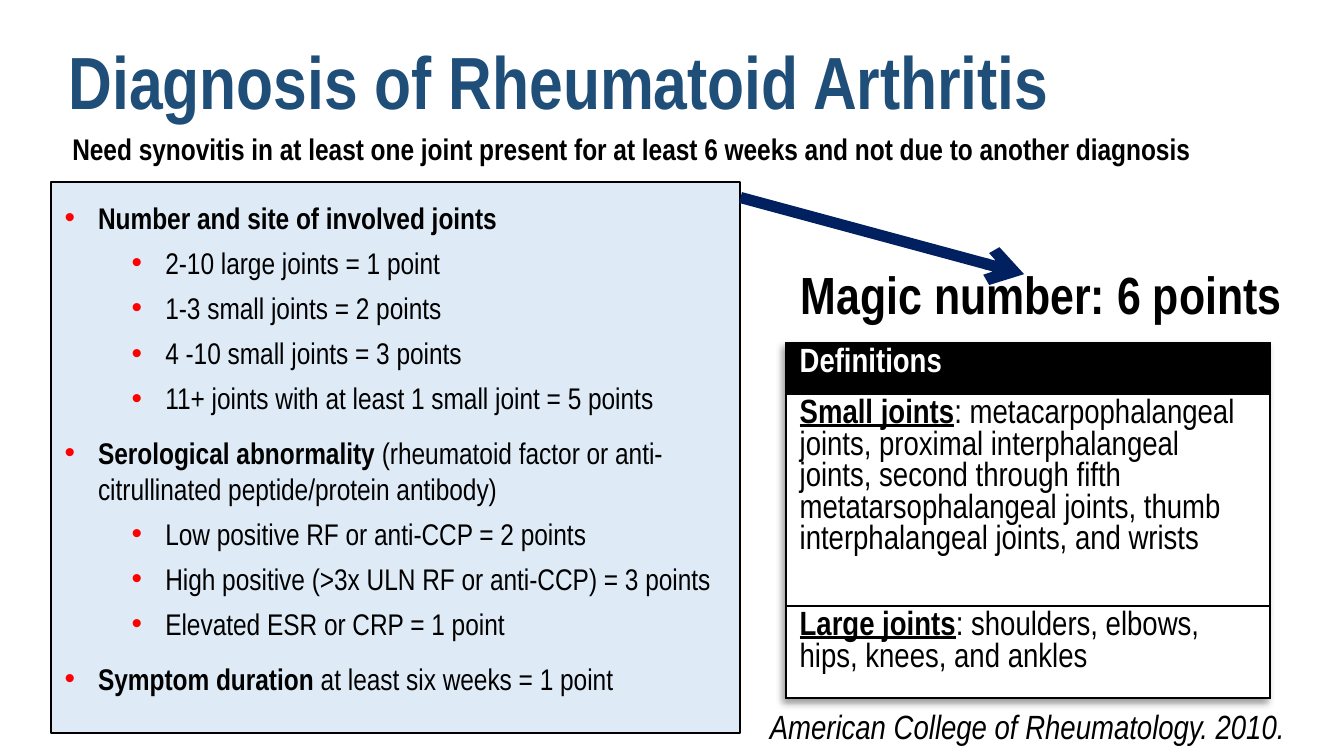
from lxml import etree
from pptx import Presentation
from pptx import util as u
from pptx.dml import color
from pptx.enum import shapes, text
from pptx.oxml import ns

FONT = "Arial Narrow"
BLACK, WHITE, RED = "000000", "FFFFFF", "FF0000"
TITLE_BLUE, PANEL_BLUE, ARROW_BLUE = "1F4E79", "DEEBF7", "002060"
COLUMNS, ROWS = 100, 56.25
UNIT = u.Inches(10) / COLUMNS

CRITERIA = [
    ("Number and site of involved joints", "", [
        "2-10 large joints = 1 point",
        "1-3 small joints = 2 points",
        "4 -10 small joints = 3 points",
        "11+ joints with at least 1 small joint = 5 points"]),
    ("Serological abnormality ",
     "(rheumatoid factor or anti-citrullinated peptide/protein antibody)", [
         "Low positive RF or anti-CCP = 2 points",
         "High positive (>3x ULN RF or anti-CCP) = 3 points",
         "Elevated ESR or CRP = 1 point"]),
    ("Symptom duration ", "at least six weeks = 1 point", []),
]
DEFINITIONS = [
    ("Small joints", ": metacarpophalangeal joints, proximal interphalangeal joints, "
     "second through fifth metatarsophalangeal joints, thumb interphalangeal joints, and wrists"),
    ("Large joints", ": shoulders, elbows, hips, knees, and ankles"),
]


def grid(*cells):
    return [u.Emu(round(cell * UNIT)) for cell in cells]


def paint(target, value):
    target.rgb = color.RGBColor.from_string(value)


def add_xml(parent, tag, **attributes):
    return etree.SubElement(parent, ns.qn(tag), attributes)


def add_span(para, words, size, ink=BLACK, bold=False, italic=False, underline=False):
    span = para.add_run()
    span.text = words
    font = span.font
    font.name, font.size = FONT, u.Pt(size)
    font.bold, font.italic, font.underline = bold, italic, underline
    paint(font.color, ink)


def place(shape, area):
    shape.left, shape.top, shape.width, shape.height = grid(*area)


def add_title(page, area):
    title = page.shapes.title
    place(title, area)
    frame = title.text_frame
    frame.word_wrap = True
    frame.auto_size = text.MSO_AUTO_SIZE.NONE
    frame.vertical_anchor = text.MSO_ANCHOR.MIDDLE
    para = frame.paragraphs[0]
    para.alignment = text.PP_ALIGN.LEFT
    para.line_spacing = 0.9
    add_span(para, "Diagnosis of Rheumatoid Arthritis", 39.6, TITLE_BLUE, bold=True)


def add_caption(page, area, words, size, wrap=False, align=text.PP_ALIGN.LEFT,
                before=0, **style):
    frame = page.shapes.add_textbox(*grid(*area)).text_frame
    frame.word_wrap = wrap
    frame.auto_size = text.MSO_AUTO_SIZE.SHAPE_TO_FIT_TEXT
    para = frame.paragraphs[0]
    para.alignment = align
    para.space_before = u.Pt(before)
    add_span(para, words, size, **style)


def add_bullet(frame, level):
    para = frame.paragraphs[0]
    if para.runs:
        para = frame.add_paragraph()
    para.level = level
    para.alignment = text.PP_ALIGN.LEFT
    para.space_before = u.Pt(5 if level else 10)
    properties = para._p.get_or_add_pPr()
    properties.set("marL", str(u.Inches(0.25 + 0.5 * level)))
    properties.set("indent", str(-u.Inches(0.25)))
    add_xml(add_xml(properties, "a:buClr"), "a:srgbClr", val=RED)
    add_xml(properties, "a:buFont", typeface="Arial")
    add_xml(properties, "a:buChar", char="•")
    return para


def add_criteria(page, area):
    left, top, width, height = area
    panel = page.shapes.add_shape(shapes.MSO_SHAPE.RECTANGLE, *grid(*area))
    panel.shadow.inherit = False
    panel.fill.solid()
    paint(panel.fill.fore_color, PANEL_BLUE)
    paint(panel.line.color, BLACK)
    panel.line.width = u.Pt(1)
    page.shapes.title.element.addprevious(panel.element)

    body = page.placeholders[1]
    place(body, (left, top + 0.8, width - 0.9, height - 1.3))
    frame = body.text_frame
    frame.word_wrap = True
    frame.auto_size = text.MSO_AUTO_SIZE.NONE
    for heading, detail, points in CRITERIA:
        para = add_bullet(frame, 0)
        add_span(para, heading, 16, bold=True)
        if detail:
            add_span(para, detail, 16)
        for point in points:
            add_span(add_bullet(frame, 1), point, 16)


def add_arrow(page, start, end):
    arrow = page.shapes.add_connector(shapes.MSO_CONNECTOR.STRAIGHT, *grid(*start, *end))
    paint(arrow.line.color, ARROW_BLUE)
    arrow.line.width = u.Pt(6)
    add_xml(arrow.line._get_or_add_ln(), "a:tailEnd", type="arrow")
    add_xml(arrow.element.spPr, "a:effectLst")


def format_cell(cell, fill):
    cell.margin_left = cell.margin_right = u.Inches(0.1)
    cell.margin_top = cell.margin_bottom = u.Inches(0.04)
    properties = cell._tc.get_or_add_tcPr()
    for side in ("L", "R", "T", "B"):
        border = add_xml(properties, f"a:ln{side}", w=str(u.Pt(1)))
        add_xml(add_xml(border, "a:solidFill"), "a:srgbClr", val=BLACK)
    cell.fill.solid()
    paint(cell.fill.fore_color, fill)
    return cell.text_frame.paragraphs[0]


def add_table_shadow(table):
    properties = table._tbl.tblPr
    effects = add_xml(properties, "a:effectLst")
    shadow = add_xml(effects, "a:outerShdw", blurRad="50800", dist="38100",
                     dir="8100000", algn="tr", rotWithShape="0")
    ink = add_xml(shadow, "a:srgbClr", val=BLACK)
    add_xml(ink, "a:alpha", val="40000")
    properties.insert(0, effects)


def add_definitions(page, area):
    row_shares = (0.14, 0.6, 0.26)
    table = page.shapes.add_table(len(row_shares), 1, *grid(*area)).table
    for row, share in zip(table.rows, row_shares):
        row.height = grid(area[3] * share)[0]
    add_span(format_cell(table.cell(0, 0), BLACK), "Definitions", 18, WHITE, bold=True)
    for index, (term, meaning) in enumerate(DEFINITIONS, start=1):
        para = format_cell(table.cell(index, 0), WHITE)
        add_span(para, term, 18, bold=True, underline=True)
        add_span(para, meaning, 18)
    add_table_shadow(table)


def main():
    deck = Presentation()
    deck.slide_width, deck.slide_height = grid(COLUMNS, ROWS)
    page = deck.slides.add_slide(deck.slide_layouts[1])
    add_title(page, (4.1, 3, 86.2, 6.7))
    add_criteria(page, (3.8, 13.55, 51.3, 41))
    add_caption(page, (55.8, 52, 40.8, 4), "American College of Rheumatology. 2010.", 18,
                align=text.PP_ALIGN.RIGHT, italic=True)
    add_definitions(page, (58.5, 25.5, 36, 26.25))
    add_caption(page, (4.4, 9.25, 85.4, 3.7),
                "Need synovitis in at least one joint present for at least 6 weeks "
                "and not due to another diagnosis", 16, wrap=True, before=10, bold=True)
    add_arrow(page, (55.1, 14.7), (76.2, 20.4))
    add_caption(page, (58.6, 19, 38.1, 5.7), "Magic number: 6 points", 28, bold=True)
    deck.save("out.pptx")


if __name__ == "__main__":
    main()
